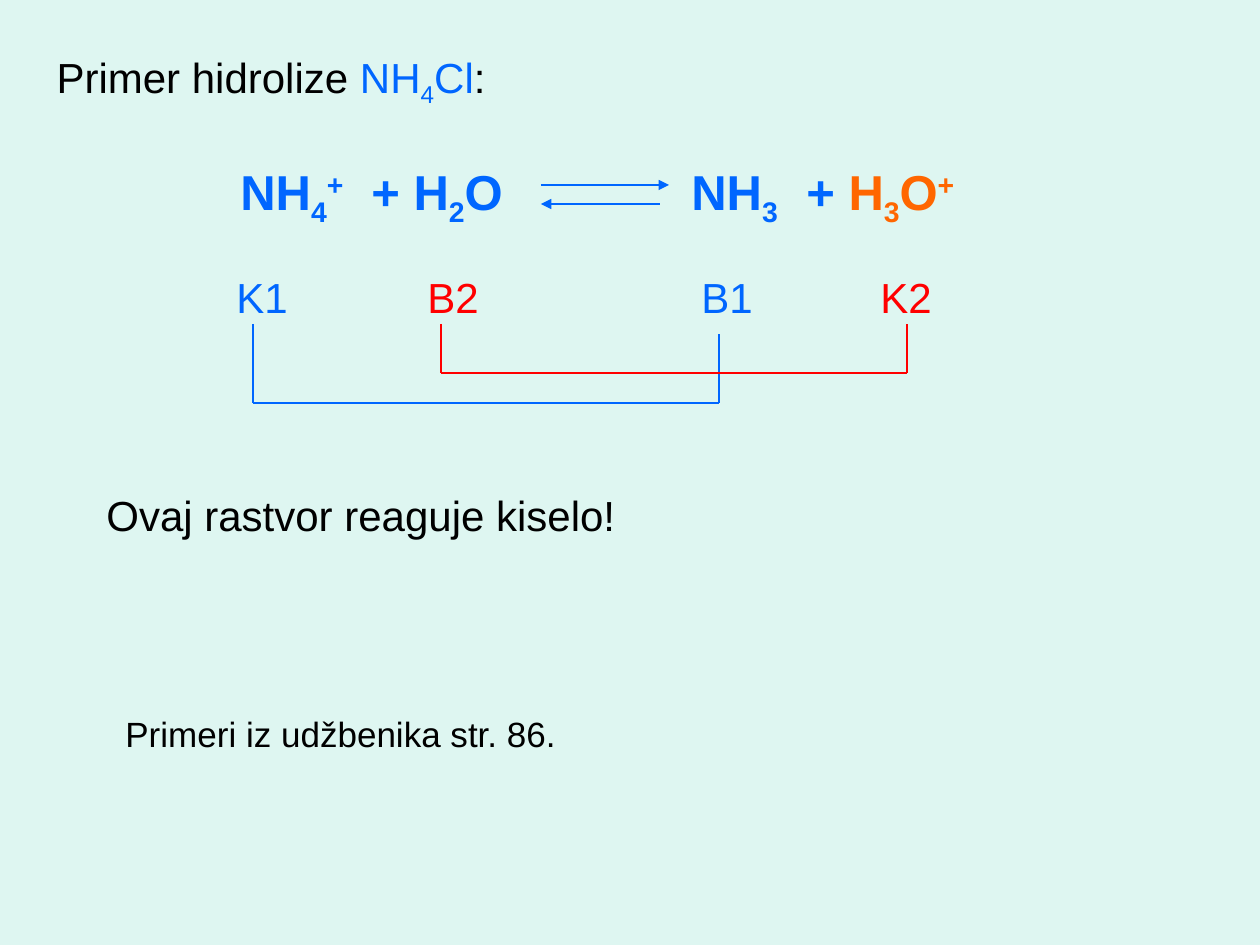
from pptx import Presentation
from pptx import util as u
from pptx.dml.color import RGBColor
from pptx.enum import shapes, text
from pptx.oxml.ns import qn
from lxml import etree

MINT = RGBColor(0xDE, 0xF6, 0xF1)
BLACK = RGBColor(0x00, 0x00, 0x00)
BLUE = RGBColor(0x00, 0x66, 0xFF)
RED = RGBColor(0xFF, 0x00, 0x00)
ORANGE = RGBColor(0xFF, 0x66, 0x00)
SUB, SUPER = -25, 30
TITLE_ONLY = 5


def px(length):
    return u.Emu(round(length * 914400 / 126))


class SlideBuilder:
    font = "Arial"
    line_width = u.Pt(0.75)

    def __init__(self, page):
        self.page = page

    def background(self, color):
        fill = self.page.background.fill
        fill.solid()
        fill.fore_color.rgb = color

    def title(self, area, spans, size):
        self.fill_box(self.page.shapes.title, area, spans, size)

    def text(self, area, spans, size, bold=False, tabs=()):
        box = self.page.shapes.add_textbox(0, 0, 0, 0)
        self.fill_box(box, area, spans, size, bold, tabs)

    def fill_box(self, box, area, spans, size, bold=False, tabs=()):
        box.left, box.top, box.width, box.height = map(px, area)
        frame = box.text_frame
        frame.word_wrap = True
        frame.auto_size = text.MSO_AUTO_SIZE.SHAPE_TO_FIT_TEXT
        frame.vertical_anchor = text.MSO_ANCHOR.TOP
        para = frame.paragraphs[0]
        para.alignment = text.PP_ALIGN.LEFT
        para.font.name = self.font
        para.font.size = u.Pt(size)
        para.font.bold = bold
        self.spacing(para, tabs)
        for words, color, *baseline in spans:
            span = para.add_run()
            span.text = words
            span.font.color.rgb = color
            if baseline:
                span._r.get_or_add_rPr().set("baseline", str(baseline[0] * 1000))

    def spacing(self, para, tabs):
        para.space_before = u.Pt(0)
        before = para._p.pPr.find(qn("a:spcBef"))
        before.remove(before[0])
        etree.SubElement(before, qn("a:spcPct"), val="50000")
        if tabs:
            stops = etree.Element(qn("a:tabLst"))
            before.addnext(stops)
            for stop in tabs:
                etree.SubElement(stops, qn("a:tab"), pos=str(int(px(stop))), algn="l")

    def line(self, start, end, color, arrow=False):
        line = self.page.shapes.add_connector(
            shapes.MSO_CONNECTOR.STRAIGHT, *map(px, (*start, *end)))
        line.line.color.rgb = color
        line.line.width = self.line_width
        properties = line._element.spPr
        if arrow:
            etree.SubElement(properties.find(qn("a:ln")), qn("a:tailEnd"), type="triangle")
        etree.SubElement(properties, qn("a:effectLst"))

    def bracket(self, left, right, left_top, right_top, bottom, color):
        points = [(left, left_top), (left, bottom), (right, bottom), (right, right_top)]
        for start, end in zip(points, points[1:]):
            self.line(start, end, color)


def main():
    deck = Presentation()
    deck.slide_width, deck.slide_height = px(1260), px(945)
    page = deck.slides.add_slide(deck.slide_layouts[TITLE_ONLY])
    slide = SlideBuilder(page)
    slide.background(MINT)

    slide.title((44, 45, 973, 63), [
        ("Primer hidrolize ", BLACK), ("NH", BLUE), ("4", BLUE, SUB),
        ("Cl", BLUE), (":", BLACK)], 24)

    slide.text((228, 155, 907, 72), [
        ("NH", BLUE), ("4", BLUE, SUB), ("+", BLUE, SUPER),
        ("\t+ H", BLUE), ("2", BLUE, SUB), ("O", BLUE),
        ("\tNH", BLUE), ("3", BLUE, SUB), ("\t+ ", BLUE),
        ("H", ORANGE), ("3", ORANGE, SUB), ("O", ORANGE), ("+", ORANGE, SUPER),
    ], 28, bold=True, tabs=(131, 451, 566))
    slide.line((541, 185), (669, 185), BLUE, arrow=True)
    slide.line((660, 204), (541, 204), BLUE, arrow=True)

    slide.text((224, 265, 802, 63), [
        ("K1", BLUE), ("\tB2", RED), ("\tB1", BLUE), ("\tK2", RED),
    ], 24, tabs=(191, 465, 644))
    slide.bracket(253, 719, 324, 334, 403, BLUE)
    slide.bracket(441, 907, 324, 324, 373, RED)

    slide.text((113, 706, 694, 54), [("Primeri iz udžbenika str. 86.", BLACK)], 20)
    slide.text((94, 483, 1111, 63), [("Ovaj rastvor reaguje kiselo!", BLACK)], 24)

    deck.save("out.pptx")


if __name__ == "__main__":
    main()
